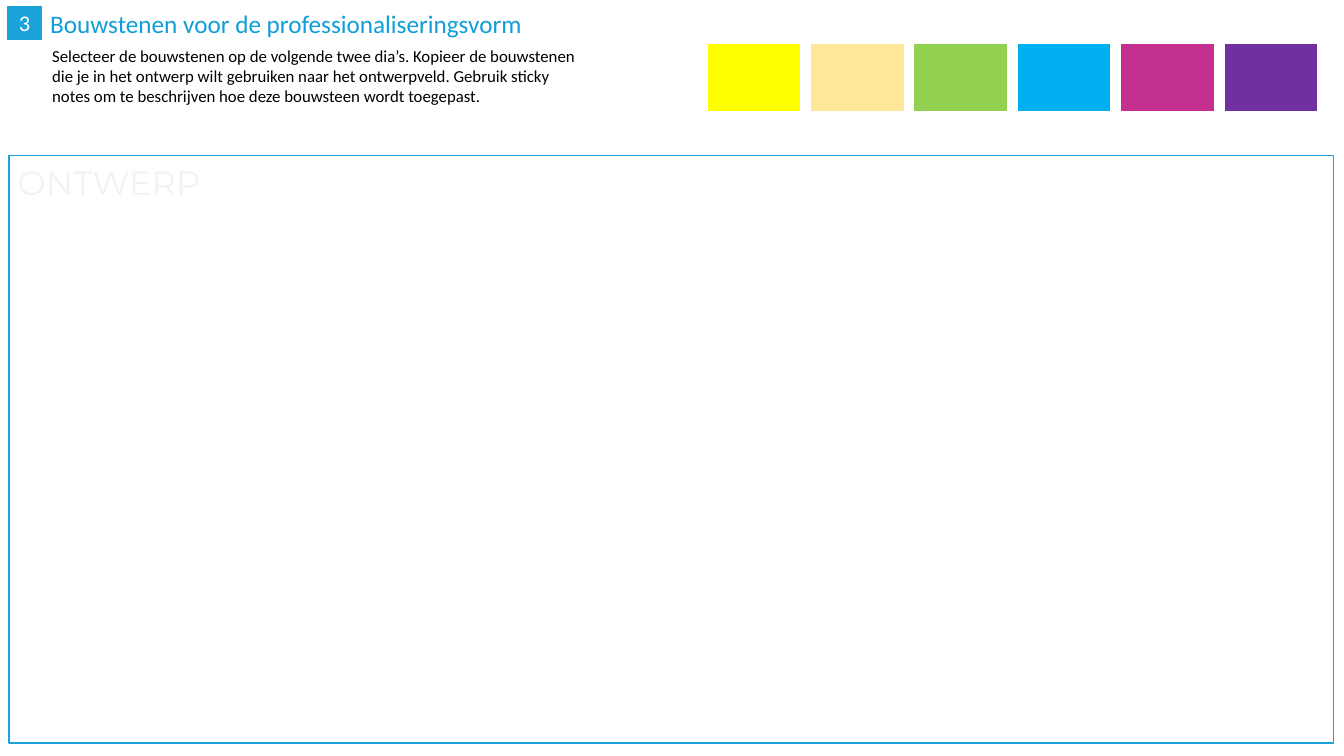
import pptx
import pptx.util
import pptx.dml.color
import pptx.enum.shapes
import pptx.enum.text

Pt = pptx.util.Pt
RGB = pptx.dml.color.RGBColor
ALIGN = pptx.enum.text.PP_ALIGN
ANCHOR = pptx.enum.text.MSO_ANCHOR

WHITE = RGB(0xFF, 0xFF, 0xFF)
BLACK = RGB(0x00, 0x00, 0x00)
BLUE = RGB(0x1C, 0xA3, 0xDA)
TITLE = RGB(0x10, 0x9E, 0xD8)
PALE = RGB(0xF2, 0xF2, 0xF2)
TILES = [
    RGB(0xFF, 0xFF, 0x00),
    RGB(0xFF, 0xE6, 0x99),
    RGB(0x92, 0xD0, 0x50),
    RGB(0x00, 0xB0, 0xF0),
    RGB(0xC4, 0x30, 0x8F),
    RGB(0x70, 0x30, 0xA0),
]
TILE_LEFT, TILE_STEP = 504.7, 73.87

HEAD = "Bouwstenen voor de professionaliseringsvorm"
GUIDE = (
    "Selecteer de bouwstenen op de volgende twee dia’s. "
    "Kopieer de bouwstenen die je in het ontwerp wilt gebruiken "
    "naar het ontwerpveld. Gebruik sticky notes om te beschrijven "
    "hoe deze bouwsteen wordt toegepast."
)


def add_rect(slide, box, fill, line, width):
    """Draw a rectangle; a fill of None leaves it open."""
    kind = pptx.enum.shapes.MSO_SHAPE.RECTANGLE
    rect = slide.shapes.add_shape(kind, *map(Pt, box))
    rect.shadow.inherit = False
    if fill is None:
        rect.fill.background()
    else:
        rect.fill.solid()
        rect.fill.fore_color.rgb = fill
    rect.line.color.rgb = line
    rect.line.width = Pt(width)
    return rect


def set_text(shape, text, size, color, face="Calibri", **layout):
    frame = shape.text_frame
    for name, value in {"word_wrap": True, **layout}.items():
        setattr(frame, name, value)
    para = frame.paragraphs[0]
    run = para.add_run()
    run.text = text
    for name, value in {"size": Pt(size), "name": face}.items():
        setattr(run.font, name, value)
    run.font.color.rgb = color
    return para


def add_label(slide, box, *style):
    label = slide.shapes.add_textbox(*map(Pt, box))
    set_text(label, *style)


def add_badge(slide, box, text):
    badge = add_rect(slide, box, BLUE, WHITE, 1)
    para = set_text(badge, text, 16, WHITE, vertical_anchor=ANCHOR.MIDDLE)
    para.alignment = ALIGN.CENTER


def main():
    deck = pptx.Presentation()
    deck.slide_width, deck.slide_height = Pt(960), Pt(540)
    slide = deck.slides.add_slide(deck.slide_layouts[6])

    add_badge(slide, (4.3, 3.6, 26.6, 25.2), "3")
    add_label(slide, (28.8, 2.2, 375, 28.8), HEAD, 18, TITLE)
    add_label(slide, (30.2, 28.8, 394, 51), GUIDE, 12, BLACK)
    add_rect(slide, (6.5, 110.9, 946, 419.8), None, BLUE, 1)
    add_label(slide, (5.6, 111.8, 200, 36), "ONTWERP", 24, PALE, "Montserrat")

    for i, color in enumerate(TILES):
        left = TILE_LEFT + i * TILE_STEP
        add_rect(slide, (left, 31, 67.7, 49), color, WHITE, 1.5)

    deck.save("out.pptx")


if __name__ == "__main__":
    main()
